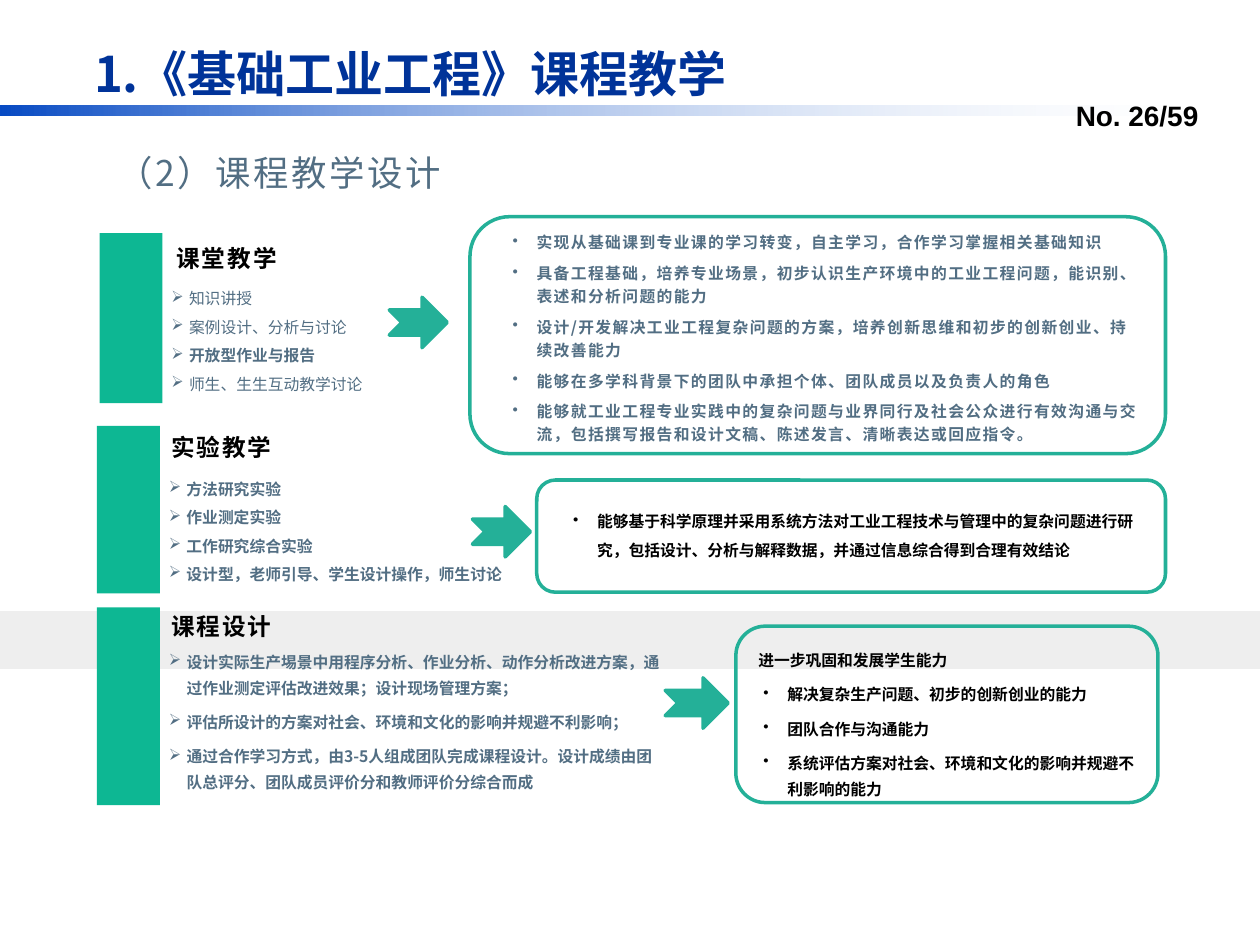
from lxml import etree
from pptx import Presentation
from pptx.dml.color import RGBColor
from pptx.enum.shapes import MSO_SHAPE
from pptx.enum.text import MSO_ANCHOR, MSO_AUTO_SIZE, PP_ALIGN
from pptx.oxml.ns import qn
from pptx.util import Inches, Pt

RECT = MSO_SHAPE.RECTANGLE
ROUND = MSO_SHAPE.ROUNDED_RECTANGLE
ARROW = MSO_SHAPE.NOTCHED_RIGHT_ARROW
TOP, MIDDLE, BOTTOM = MSO_ANCHOR.TOP, MSO_ANCHOR.MIDDLE, MSO_ANCHOR.BOTTOM
CENTER, RIGHT = PP_ALIGN.CENTER, PP_ALIGN.RIGHT
GROW, NO_FIT = MSO_AUTO_SIZE.SHAPE_TO_FIT_TEXT, MSO_AUTO_SIZE.NONE

FONT = "Noto Sans CJK SC"
COLORS = {
    "title": "003399", "black": "000000", "slate": "526E83", "band": "EEEEEE",
    "bar": "0DB793", "teal": "24B098", "blue": "084BC4", "pale": "D2DFF4",
}

SECTIONS = [
    {"title": "课堂教学", "bar": (0.79, 1.85, 0.5, 1.35), "head": (1.4, 1.91),
     "list": (1.36, 2.22, 1.88, 0.91), "bold": (2,), "spacing": 1.5, "before": 0,
     "items": ["知识讲授", "案例设计、分析与讨论", "开放型作业与报告", "师生、生生互动教学讨论"],
     "arrow": (3.09, 2.36, 0.46, 0.4)},
    {"title": "实验教学", "bar": (0.77, 3.38, 0.5, 1.33), "head": (1.36, 3.41),
     "list": (1.34, 3.73, 3.24, 0.91), "bold": range(4), "spacing": 1.5, "before": 0,
     "items": ["方法研究实验", "作业测定实验", "工作研究综合实验",
               "设计型，老师引导、学生设计操作，师生讨论"],
     "arrow": (3.75, 4.02, 0.46, 0.4)},
    {"title": "课程设计", "bar": (0.77, 4.82, 0.5, 1.57), "head": (1.36, 4.83),
     "list": (1.34, 5.12, 3.92, 1.19), "bold": range(3), "spacing": Pt(15), "before": 4.5,
     "items": ["设计实际生产埸景中用程序分析、作业分析、动作分析改进方案，通过作业测定评估改进效果；设计现场管理方案；",
               "评估所设计的方案对社会、环境和文化的影响并规避不利影响；",
               "通过合作学习方式，由3-5人组成团队完成课程设计。设计成绩由团队总评分、团队成员评价分和教师评价分综合而成"],
     "arrow": (5.28, 5.38, 0.5, 0.4)},
]

GOALS = [
    {"frame": (3.73, 1.72, 5.52, 1.88), "text": (3.97, 1.77, 5.15, 1.84),
     "color": "slate", "track": 0.8, "spacing": Pt(13.1), "before": 4.5, "margin": 0.19,
     "items": ["实现从基础课到专业课的学习转变，自主学习，合作学习掌握相关基础知识",
               "具备工程基础，培养专业场景，初步认识生产环境中的工业工程问题，能识别、表述和分析问题的能力",
               "设计/开发解决工业工程复杂问题的方案，培养创新思维和初步的创新创业、持续改善能力",
               "能够在多学科背景下的团队中承担个体、团队成员以及负责人的角色",
               "能够就工业工程专业实践中的复杂问题与业界同行及社会公众进行有效沟通与交流，包括撰写报告和设计文稿、陈述发言、清晰表达或回应指令。"]},
    {"frame": (4.26, 3.81, 4.99, 0.89), "text": (4.41, 3.94, 4.71, 0.56),
     "color": "black", "track": 0, "spacing": 1.5, "before": 0, "margin": 0.23,
     "items": ["能够基于科学原理并采用系统方法对工业工程技术与管理中的复杂问题进行研究，包括设计、分析与解释数据，并通过信息综合得到合理有效结论"]},
    {"frame": (5.84, 4.97, 3.35, 1.4), "text": (5.92, 5.06, 3.25, 1.36),
     "color": "black", "track": 0, "spacing": Pt(15), "before": 4.5, "margin": 0.23,
     "lead": "进一步巩固和发展学生能力",
     "items": ["解决复杂生产问题、初步的创新创业的能力", "团队合作与沟通能力",
               "系统评估方案对社会、环境和文化的影响并规避不利影响的能力"]},
]


def rgb(name):
    return RGBColor.from_string(COLORS[name])


def add_box(s, kind, box, fill=None, line=None):
    sp = s.shapes.add_shape(kind, *map(Inches, box))
    sp.shadow.inherit = False
    if fill:
        sp.fill.solid()
        sp.fill.fore_color.rgb = rgb(fill)
    else:
        sp.fill.background()
    if line:
        sp.line.color.rgb = rgb(line)
        sp.line.width = Pt(2)
    else:
        sp.line.fill.background()
    return sp


def add_rule(s):
    sp = add_box(s, RECT, (0, 0.84, 9.33, 0.08))
    sp.fill.gradient()
    sp.fill.gradient_angle = 0
    for stop, name in zip(sp.fill.gradient_stops, ("blue", "pale")):
        stop.color.rgb = rgb(name)
    last = sp.fill._xPr.findall(".//" + qn("a:srgbClr"))[-1]
    etree.SubElement(last, qn("a:alpha"), val="0")


def add_text(s, box, anchor=TOP, inset=None):
    tf = s.shapes.add_textbox(*map(Inches, box)).text_frame
    tf.word_wrap = True
    tf.auto_size = GROW
    tf.vertical_anchor = anchor
    if inset is not None:
        tf.margin_left = tf.margin_right = tf.margin_top = tf.margin_bottom = Inches(inset)
    return tf


def add_run(p, text, size, color, bold=False, track=0, font=FONT):
    r = p.add_run()
    r.text = text
    r.font.size = Pt(size)
    r.font.bold = bold
    r.font.name = font
    r.font.color.rgb = rgb(color)
    rPr = r._r.get_or_add_rPr()
    etree.SubElement(rPr, qn("a:ea"), typeface=font)
    if track:
        rPr.set("spc", str(round(track * 100)))


def next_paragraph(tf, spacing, before=0):
    p = tf.paragraphs[0] if not tf.paragraphs[0].runs else tf.add_paragraph()
    p.line_spacing = spacing
    p.space_before = Pt(before)
    return p


def set_bullet(p, char, margin, hang):
    pPr = p._p.get_or_add_pPr()
    pPr.set("marL", str(Inches(margin)))
    pPr.set("indent", str(-Inches(hang)))
    etree.SubElement(pPr, qn("a:buChar"), char=char)


def add_section(s, sec):
    add_box(s, RECT, sec["bar"], "bar")
    tf = add_text(s, (*sec["head"], 2.99, 0.25), BOTTOM, 0)
    add_run(next_paragraph(tf, 1.12), sec["title"], 13.5, "black", True, 1.2)
    tf = add_text(s, sec["list"], inset=0)
    for i, item in enumerate(sec["items"]):
        p = next_paragraph(tf, sec["spacing"], sec["before"])
        set_bullet(p, "➢", 0.14, 0.14)
        add_run(p, item, 9, "slate", i in sec["bold"])
    add_box(s, ARROW, sec["arrow"], "teal", "teal")


def add_goal(s, goal):
    add_box(s, ROUND, goal["frame"], line="teal")
    tf = add_text(s, goal["text"])
    if "lead" in goal:
        p = next_paragraph(tf, goal["spacing"], goal["before"])
        add_run(p, goal["lead"], 9, goal["color"], True)
    for item in goal["items"]:
        p = next_paragraph(tf, goal["spacing"], goal["before"])
        set_bullet(p, "•", goal["margin"], 0.19)
        add_run(p, item, 9, goal["color"], True, goal["track"])


def add_title(s):
    sp = s.shapes.title
    sp.left, sp.top, sp.width, sp.height = map(Inches, (0.59, 0.29, 5.33, 0.57))
    tf = sp.text_frame
    tf.word_wrap = False
    tf.auto_size = NO_FIT
    tf.vertical_anchor = MIDDLE
    p = tf.paragraphs[0]
    p.alignment = CENTER
    add_run(p, "1.《基础工业工程》课程教学", 28, "title", True)


def main():
    prs = Presentation()
    prs.slide_width, prs.slide_height = Inches(10), Inches(7.5)
    s = prs.slides.add_slide(prs.slide_layouts[5])
    add_title(s)
    add_rule(s)
    p = next_paragraph(add_text(s, (7.28, 0.73, 2.33, 0.35)), 1.0)
    p.alignment = RIGHT
    add_run(p, "No. 26/59", 16, "black", True, font="Arial")
    add_box(s, RECT, (0, 4.85, 10, 0.46), "band")
    tf = add_text(s, (0.91, 1.19, 8.31, 0.35), MIDDLE, 0.02)
    add_run(next_paragraph(tf, 1.01), "（2）课程教学设计", 20.2, "slate", track=1.6)
    for sec, goal in zip(SECTIONS, GOALS):
        add_section(s, sec)
        add_goal(s, goal)
    prs.save("out.pptx")


if __name__ == "__main__":
    main()
